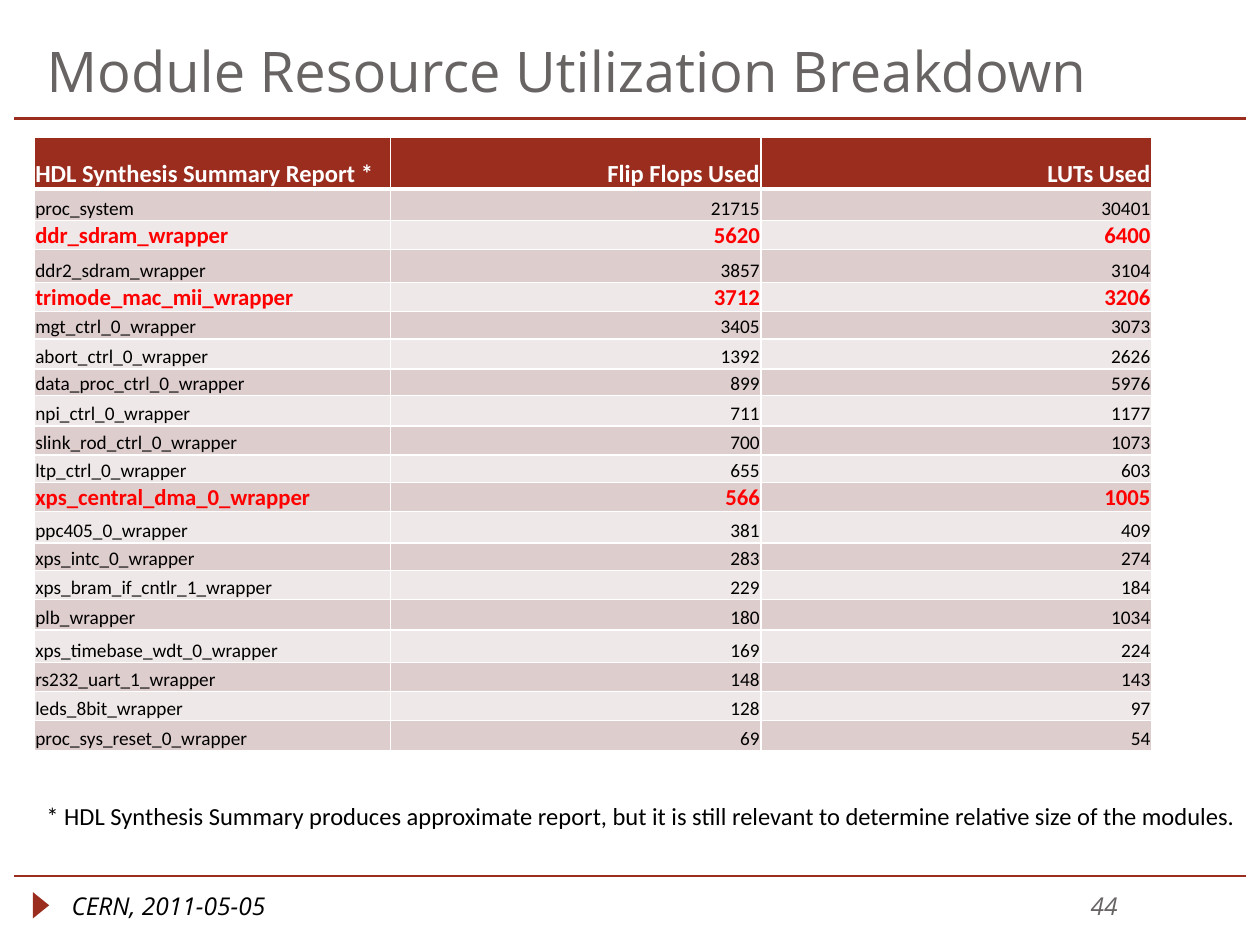
from lxml import etree
from pptx import Presentation
from pptx.dml.color import RGBColor
from pptx.enum.shapes import MSO_CONNECTOR, MSO_SHAPE
from pptx.enum.text import MSO_ANCHOR, MSO_AUTO_SIZE, PP_ALIGN
from pptx.oxml.ns import qn
from pptx.util import Inches, Pt

STRAIGHT = MSO_CONNECTOR.STRAIGHT
TRIANGLE = MSO_SHAPE.ISOSCELES_TRIANGLE
BOTTOM, TOP = MSO_ANCHOR.BOTTOM, MSO_ANCHOR.TOP
LEFT, RIGHT = PP_ALIGN.LEFT, PP_ALIGN.RIGHT
NO_FIT, GROW = MSO_AUTO_SIZE.NONE, MSO_AUTO_SIZE.SHAPE_TO_FIT_TEXT

COLORS = {
    "accent": "9B2D1F",
    "gray": "696464",
    "black": "000000",
    "white": "FFFFFF",
    "highlight": "FF0000",
    "dark_band": "DECDCD",
    "light_band": "EFE8E8",
}
TITLE = "Module Resource Utilization Breakdown"
FOOTNOTE = (
    "* HDL Synthesis Summary produces approximate report, but it is still "
    "relevant to determine relative size of the modules."
)
HEADER = ("HDL Synthesis Summary Report *", "Flip Flops Used", "LUTs Used")
HEADER_HEIGHT = 0.41
MODULES = [
    ("proc_system", 21715, 30401, 0.25),
    ("ddr_sdram_wrapper", 5620, 6400, 0.22),
    ("ddr2_sdram_wrapper", 3857, 3104, 0.26),
    ("trimode_mac_mii_wrapper", 3712, 3206, 0.23),
    ("mgt_ctrl_0_wrapper", 3405, 3073, 0.22),
    ("abort_ctrl_0_wrapper", 1392, 2626, 0.24),
    ("data_proc_ctrl_0_wrapper", 899, 5976, 0.21),
    ("npi_ctrl_0_wrapper", 711, 1177, 0.24),
    ("slink_rod_ctrl_0_wrapper", 700, 1073, 0.23),
    ("ltp_ctrl_0_wrapper", 655, 603, 0.22),
    ("xps_central_dma_0_wrapper", 566, 1005, 0.22),
    ("ppc405_0_wrapper", 381, 409, 0.25),
    ("xps_intc_0_wrapper", 283, 274, 0.22),
    ("xps_bram_if_cntlr_1_wrapper", 229, 184, 0.23),
    ("plb_wrapper", 180, 1034, 0.24),
    ("xps_timebase_wdt_0_wrapper", 169, 224, 0.26),
    ("rs232_uart_1_wrapper", 148, 143, 0.23),
    ("leds_8bit_wrapper", 128, 97, 0.23),
    ("proc_sys_reset_0_wrapper", 69, 54, 0.24),
]
HIGHLIGHTED = {
    "ddr_sdram_wrapper", "trimode_mac_mii_wrapper", "xps_central_dma_0_wrapper",
}
COLUMN_WIDTHS = (2.83, 2.94, 3.1)
RULES = [(6.95, 1.25), (0.94, 1.5)]


def rgb(name):
    return RGBColor.from_string(COLORS[name])


def style(paragraph, font_name, size, color, bold=False, italic=False, align=LEFT):
    paragraph.alignment = align
    font = paragraph.font
    font.name, font.size = font_name, Pt(size)
    font.bold, font.italic = bold, italic
    font.color.rgb = rgb(color)


def add_rule(slide, y, width):
    rule = slide.shapes.add_connector(
        STRAIGHT, Inches(0.11), Inches(y), Inches(9.89), Inches(y))
    rule.line.color.rgb = rgb("accent")
    rule.line.width = Pt(width)
    etree.SubElement(rule._element.spPr, qn("a:effectLst"))


def add_text(slide, text, place, wrap=True, fit=NO_FIT, **look):
    box = slide.shapes.add_textbox(*map(Inches, place))
    frame = box.text_frame
    frame.word_wrap, frame.auto_size = wrap, fit
    frame.vertical_anchor = TOP
    frame.text = text
    style(frame.paragraphs[0], **look)


def add_borders(cell, bottom_width):
    properties = cell._tc.get_or_add_tcPr()
    for side, width in (("L", 1), ("R", 1), ("T", 1), ("B", bottom_width)):
        border = etree.SubElement(properties, qn(f"a:ln{side}"), w=str(Pt(width)))
        fill = etree.SubElement(border, qn("a:solidFill"))
        etree.SubElement(fill, qn("a:srgbClr"), val=COLORS["white"])


def add_resource_table(slide):
    rows = [HEADER] + [module[:3] for module in MODULES]
    heights = [HEADER_HEIGHT] + [module[3] for module in MODULES]
    table = slide.shapes.add_table(
        len(rows), len(HEADER), Inches(0.27), Inches(1.09),
        Inches(sum(COLUMN_WIDTHS)), Inches(sum(heights))).table
    for column, width in zip(table.columns, COLUMN_WIDTHS):
        column.width = Inches(width)
    for index, (values, height) in enumerate(zip(rows, heights)):
        table.rows[index].height = Inches(height)
        if index == 0:
            fill, size, color, bold = "accent", 14, "white", True
        else:
            fill = "dark_band" if index % 2 else "light_band"
            bold = values[0] in HIGHLIGHTED
            size, color = (13, "highlight") if bold else (11, "black")
        for position, value in enumerate(values):
            cell = table.cell(index, position)
            cell.margin_left = cell.margin_right = cell.margin_top = Inches(0.01)
            cell.margin_bottom = 0
            cell.vertical_anchor = BOTTOM
            add_borders(cell, 1 if index else 3)
            cell.fill.solid()
            cell.fill.fore_color.rgb = rgb(fill)
            cell.text = str(value)
            style(cell.text_frame.paragraphs[0], "Calibri", size, color, bold,
                  align=RIGHT if position else LEFT)


def main():
    deck = Presentation()
    deck.slide_width, deck.slide_height = Inches(10), Inches(7.5)
    slide = deck.slides.add_slide(deck.slide_layouts[5])

    for y, width in RULES:
        add_rule(slide, y, width)

    marker = slide.shapes.add_shape(
        TRIANGLE, Inches(0.22), Inches(7.12), Inches(0.21), Inches(0.13))
    marker.rotation = 90
    marker.shadow.inherit = False
    marker.fill.solid()
    marker.fill.fore_color.rgb = rgb("accent")
    marker.line.fill.background()

    title = slide.shapes.title
    title.left, title.top = Inches(0.27), Inches(0.2)
    title.width, title.height = Inches(9), Inches(0.62)
    frame = title.text_frame
    frame.margin_top = frame.margin_bottom = 0
    frame.vertical_anchor, frame.auto_size = BOTTOM, NO_FIT
    frame.text = TITLE
    style(frame.paragraphs[0], "Open Sans", 32, "gray")

    add_text(slide, "CERN, 2011-05-05", (0.47, 7.02, 2.68, 0.4),
             font_name="Open Sans", size=14, color="black", italic=True)
    add_text(slide, "44", (6.8, 7.02, 2.17, 0.4),
             font_name="Open Sans", size=14, color="gray", italic=True, align=RIGHT)
    add_resource_table(slide)
    add_text(slide, FOOTNOTE, (0.27, 6.31, 9.69, 0.34), wrap=False, fit=GROW,
             font_name="Calibri", size=14, color="black")
    deck.save("out.pptx")


if __name__ == "__main__":
    main()
